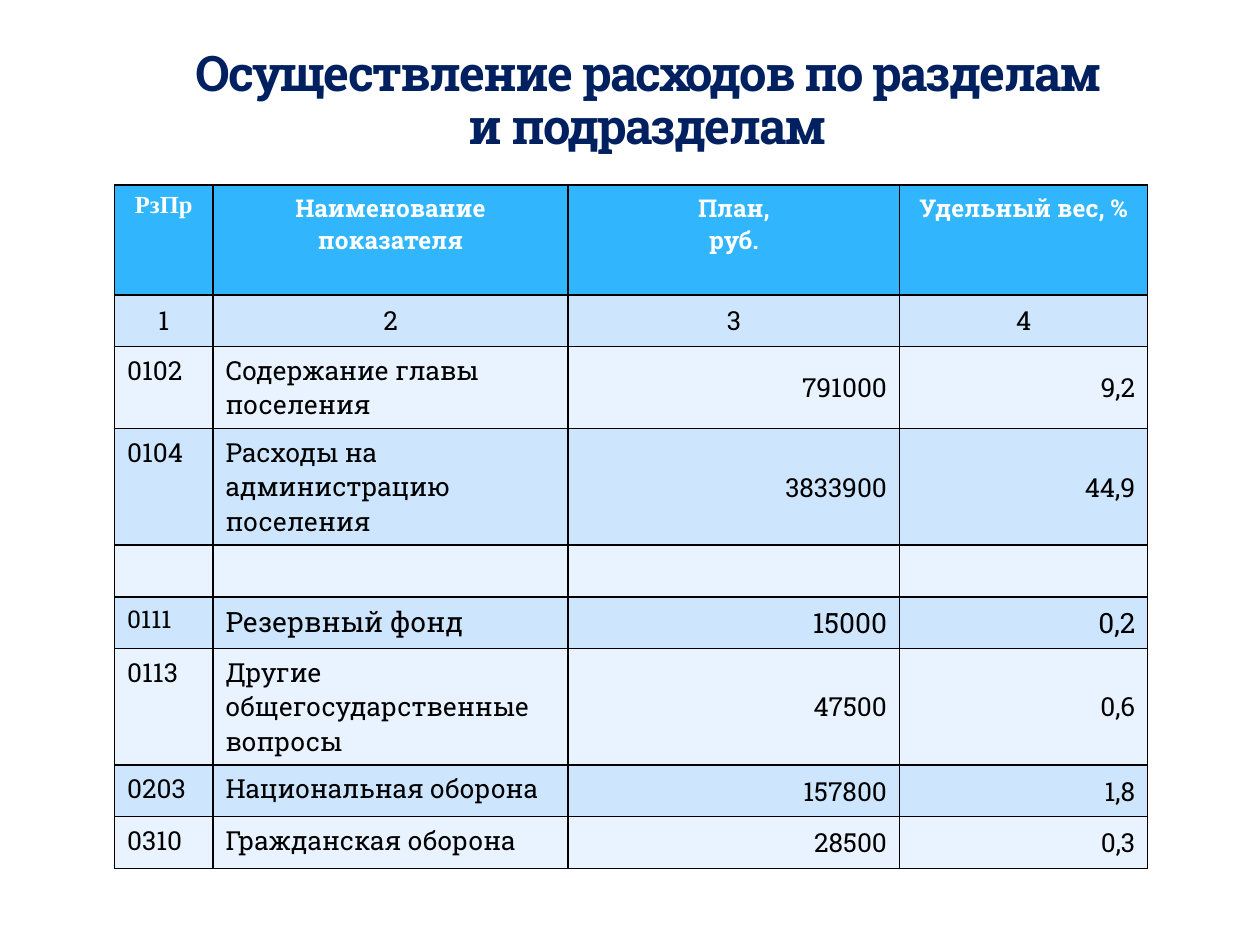
from lxml import etree
from pptx import Presentation
from pptx.dml.color import RGBColor
from pptx.enum.text import MSO_ANCHOR, PP_ALIGN
from pptx.oxml.ns import qn
from pptx.util import Inches, Pt

LEFT, CENTER, RIGHT = PP_ALIGN.LEFT, PP_ALIGN.CENTER, PP_ALIGN.RIGHT
TOP, MIDDLE, BOTTOM = MSO_ANCHOR.TOP, MSO_ANCHOR.MIDDLE, MSO_ANCHOR.BOTTOM

SLAB, TIMES = "Roboto Slab", "Times New Roman"
NAVY, WHITE, BLACK = "002060", "FFFFFF", "000000"
HEADER_FILL, BANDS = "31B6FD", ("CEE5FE", "E8F3FF")

TITLE = "Осуществление расходов по разделам и подразделам"
HEADER = ("РзПр", "Наименование показателя", "План,\nруб.", "Удельный вес, %")
NUMBERING = ("1", "2", "3", "4")
EXPENSES = [
    ("0102", "Содержание главы поселения", "791000", "9,2"),
    ("0104", "Расходы на администрацию поселения", "3833900", "44,9"),
    ("", "", "", ""),
    ("0111", "Резервный фонд", "15000", "0,2"),
    ("0113", "Другие общегосударственные вопросы", "47500", "0,6"),
    ("0203", "Национальная оборона", "157800", "1,8"),
    ("0310", "Гражданская оборона", "28500", "0,3"),
]
RESERVE_SIZES = (14, 16, 16, 16)
COLUMN_WIDTHS = (0.78, 2.82, 2.63, 1.97)
HEADER_HEIGHT, ROW_HEIGHT = 0.87, 0.41


def rgb(color):
    return RGBColor.from_string(color)


def write(frame, text, size, color, align, bold=False, font=SLAB):
    frame.text = text
    for paragraph in frame.paragraphs:
        paragraph.alignment = align
        for run in paragraph.runs:
            run.font.name = font
            run.font.size = Pt(size)
            run.font.bold = bold
            run.font.color.rgb = rgb(color)


def add_borders(cell):
    properties = cell._tc.get_or_add_tcPr()
    for position, side in enumerate(("a:lnL", "a:lnR", "a:lnT", "a:lnB")):
        line = etree.Element(qn(side), w=str(Pt(1)))
        fill = etree.SubElement(line, qn("a:solidFill"))
        etree.SubElement(fill, qn("a:srgbClr"), val=BLACK)
        properties.insert(position, line)


def add_title(slide):
    box = slide.shapes.add_textbox(Inches(1.3), Inches(0.76), Inches(7.68), Inches(0.5))
    frame = box.text_frame
    frame.word_wrap = True
    frame.vertical_anchor = BOTTOM
    frame.margin_bottom = Inches(0.03)
    write(frame, TITLE, 28, NAVY, CENTER, bold=True)
    heading = frame.paragraphs[0]
    heading.line_spacing = 0.9
    heading.runs[0].font._element.set("spc", "-100")


def add_expense_table(slide):
    rows = [HEADER, NUMBERING, *EXPENSES]
    heights = [HEADER_HEIGHT] + [ROW_HEIGHT] * (len(rows) - 1)
    table = slide.shapes.add_table(
        len(rows), len(HEADER), Inches(0.91), Inches(1.47),
        Inches(sum(COLUMN_WIDTHS)), Inches(sum(heights))).table
    for column, width in zip(table.columns, COLUMN_WIDTHS):
        column.width = Inches(width)

    for r, (values, height) in enumerate(zip(rows, heights)):
        table.rows[r].height = Inches(height)
        is_header = values is HEADER
        for c, value in enumerate(values):
            cell = table.cell(r, c)
            cell.fill.solid()
            cell.fill.fore_color.rgb = rgb(HEADER_FILL if is_header else BANDS[(r - 1) % 2])
            add_borders(cell)
            if is_header:
                write(cell.text_frame, value, 14, WHITE, CENTER, bold=True,
                      font=TIMES if c == 0 else SLAB)
                continue
            is_numbering = values is NUMBERING
            is_amount = c >= 2
            cell.vertical_anchor = MIDDLE if is_numbering or is_amount else TOP
            align = CENTER if is_numbering else RIGHT if is_amount else LEFT
            size = RESERVE_SIZES[c] if values[0] == "0111" else 15
            write(cell.text_frame, value, size, BLACK, align)


def main():
    prs = Presentation()
    prs.slide_width, prs.slide_height = Inches(10), Inches(7.5)
    slide = prs.slides.add_slide(prs.slide_layouts[6])
    add_expense_table(slide)
    add_title(slide)
    prs.save("out.pptx")


if __name__ == "__main__":
    main()
